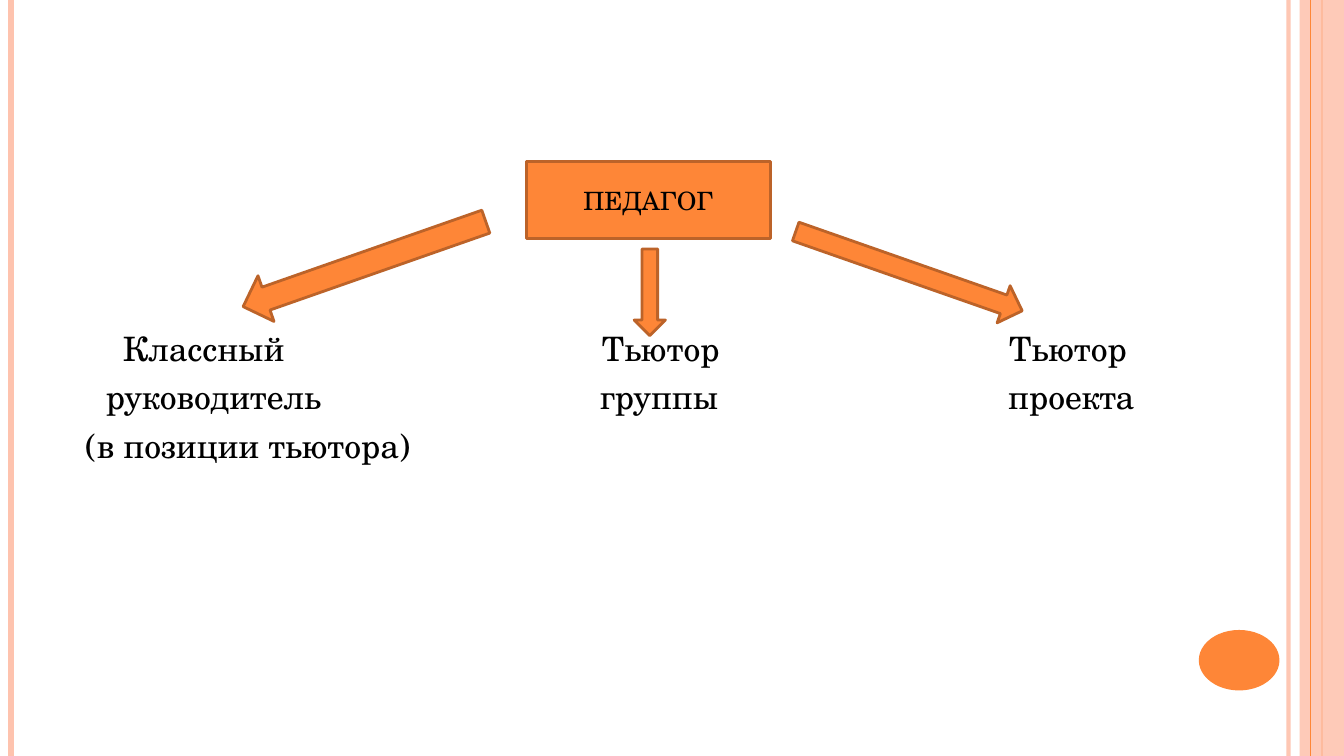
from lxml.etree import SubElement
from pptx import Presentation
from pptx.dml.color import RGBColor
from pptx.enum.shapes import MSO_CONNECTOR as Connector, MSO_SHAPE as Shape
from pptx.enum.text import MSO_ANCHOR as Anchor, PP_ALIGN as Align
from pptx.oxml.ns import qn
from pptx.util import Pt

PX = 9144
WIDTH, HEIGHT = 1333, 750
FONT = "TeX Gyre Schola"
ORANGE, BROWN, PEACH, BLACK = "FE8637", "BC6329", "FEC3AE", "000000"

STRIPES = [
    (1278, PEACH, 3, 93),
    (11, PEACH, 4.5, 100),
    (1311, ORANGE, 1.5, 100),
]
BAND = (1289, 0, 44, HEIGHT)
BAND_STRIPE = (1300, ORANGE, 0.75, 100)
BADGE = (1189, 625, 80, 60)
TEACHER = ("ПЕДАГОГ", (522, 160, 242, 77))
ARROWS = [
    (Shape.RIGHT_ARROW, (234, 238, 255, 48), 160.7),
    (Shape.DOWN_ARROW, (629, 247, 31, 86), 0),
    (Shape.DOWN_ARROW, (882, 150, 39, 238), 289.3),
]
ROLES_TOP = 325
ROLES = [
    (85, 400, [("Классный", 37), ("руководитель", 20), ("(в позиции тьютора)", 0)]),
    (595, 200, [("Тьютор", 2), ("группы", 0)]),
    (1000, 200, [("Тьютор", 1), ("проекта", 0)]),
]


def px(*lengths):
    return [length * PX for length in lengths]


def color(value):
    return RGBColor.from_string(value)


def set_alpha(parent, percent):
    if percent < 100:
        target = next(parent.iter(qn("a:srgbClr")))
        SubElement(target, qn("a:alpha"), val=str(percent * 1000))


def add_stripe(x, tone, weight, opacity):
    line = slide.shapes.add_connector(Connector.STRAIGHT, *px(x, 0, x, HEIGHT))
    line.line.color.rgb = color(tone)
    line.line.width = Pt(weight)
    properties = line._element.spPr
    set_alpha(properties, opacity)
    SubElement(properties, qn("a:effectLst"))


def add_figure(kind, box, fill=ORANGE, outline=None, rotation=0, opacity=100):
    shape = slide.shapes.add_shape(kind, *px(*box))
    shape.shadow.inherit = False
    shape.rotation = rotation
    shape.fill.solid()
    shape.fill.fore_color.rgb = color(fill)
    set_alpha(shape._element.spPr, opacity)
    if outline:
        shape.line.color.rgb = color(outline)
        shape.line.width = Pt(2)
    else:
        shape.line.fill.background()
    return shape


def write(paragraph, text, size=24, align=Align.LEFT, before=0, indent=0):
    paragraph.alignment = align
    paragraph.space_before = Pt(before)
    if indent:
        paragraph._p.get_or_add_pPr().set("marL", str(indent * PX))
    run = paragraph.add_run()
    run.text = text
    run.font.name = FONT
    run.font.size = Pt(size)
    run.font.color.rgb = color(BLACK)


def add_role(left, width, lines):
    box = slide.shapes.add_textbox(*px(left, ROLES_TOP, width, 48 * len(lines)))
    frame = box.text_frame
    frame.word_wrap = True
    frame.margin_left = frame.margin_right = frame.margin_top = frame.margin_bottom = 0
    for index, (text, indent) in enumerate(lines):
        paragraph = frame.add_paragraph() if index else frame.paragraphs[0]
        write(paragraph, text, before=6 if index else 0, indent=indent)


presentation = Presentation()
presentation.slide_width, presentation.slide_height = px(WIDTH, HEIGHT)
slide = presentation.slides.add_slide(presentation.slide_layouts[6])

for stripe in STRIPES:
    add_stripe(*stripe)
add_figure(Shape.RECTANGLE, BAND, fill=PEACH, opacity=87)
add_stripe(*BAND_STRIPE)
add_figure(Shape.OVAL, BADGE)

for role in ROLES:
    add_role(*role)

label, teacher_box = TEACHER
teacher = add_figure(Shape.RECTANGLE, teacher_box, outline=BROWN)
teacher.text_frame.vertical_anchor = Anchor.MIDDLE
write(teacher.text_frame.paragraphs[0], label, size=18, align=Align.CENTER)

for kind, box, rotation in ARROWS:
    add_figure(kind, box, outline=BROWN, rotation=rotation)

presentation.save("out.pptx")
